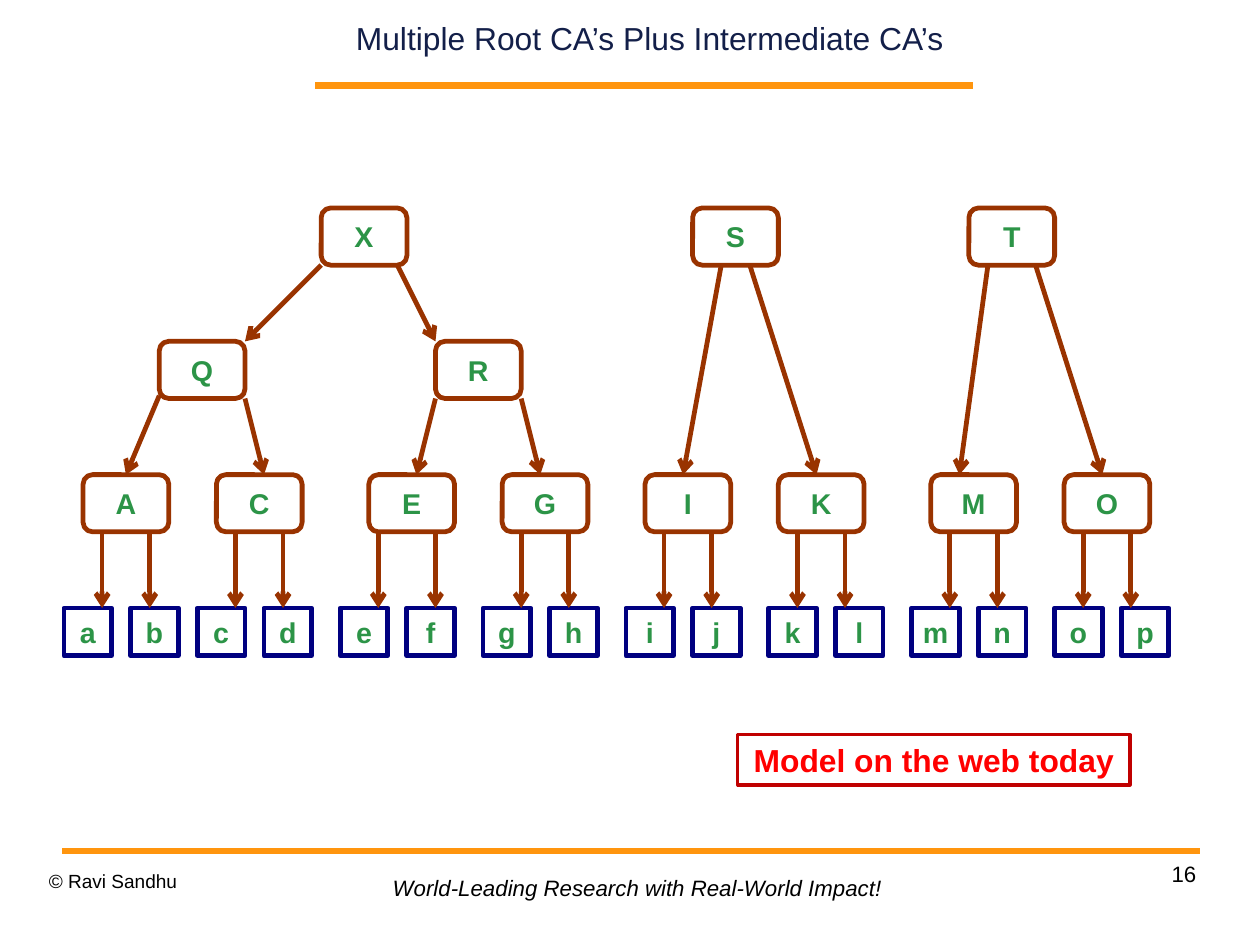
from dataclasses import dataclass

from lxml.etree import SubElement
from pptx import Presentation
from pptx.dml.color import RGBColor
from pptx.enum.shapes import MSO_CONNECTOR as Link, MSO_SHAPE as Preset
from pptx.enum.text import MSO_ANCHOR as Anchor, MSO_AUTO_SIZE as Fit, PP_ALIGN as Align
from pptx.oxml.ns import qn
from pptx.util import Cm, Inches, Pt

WIDTH, HEIGHT = Cm(28), Cm(21)
CELL = 1 / 12                  # grid step of the tree, inches
TREE_LEFT, TREE_TOP = 0.56, 1.82
CA_COLS, CA_ROWS, USER_SIDE = 9, 6, 5
ROOT, MIDDLE, ISSUER, USER = 0, 14, 28, 42    # top row of each level
BROWN, NAVY, GREEN, ORANGE = "993300", "000080", "2C9447", "FF950E"


@dataclass
class Node:
    name: str
    col: float
    row: float


@dataclass
class Arrow:
    start: tuple[float, float]
    end: tuple[float, float]
    target: str = ""           # node joined at the middle of its top side


AUTHORITIES = [
    Node("X", 27, ROOT), Node("S", 66, ROOT), Node("T", 95, ROOT),
    Node("Q", 10, MIDDLE), Node("R", 39, MIDDLE),
    *(Node(name, col, ISSUER)
      for name, col in zip("ACEGIKMO", (2, 16, 32, 46, 61, 75, 91, 105))),
]
# Users stand in pairs, seven columns apart
USERS = [
    Node("abcdefghijklmnop"[2 * pair + i], col + 7 * i, USER)
    for pair, col in enumerate((0, 14, 29, 44, 59, 74, 89, 104))
    for i in range(2)
]
ARROWS = [
    Arrow((27, ROOT + CA_ROWS), (19, MIDDLE)),
    Arrow((35, ROOT + CA_ROWS), (39, MIDDLE)),
    Arrow((10, MIDDLE + CA_ROWS - 0.3), (6.5, ISSUER), "A"),
    *(Arrow((start, MIDDLE + CA_ROWS), (end, ISSUER))
      for start, end in ((19, 21), (39, 37), (48, 50))),
    *(Arrow((start, ROOT + CA_ROWS), (end, ISSUER))
      for start, end in ((69, 65), (72, 79), (97, 94), (102, 109))),
    *(Arrow((ca.col + shift, ISSUER + CA_ROWS), (ca.col + shift, USER))
      for ca in AUTHORITIES if ca.row == ISSUER
      for shift in (1 if ca.name == "E" else 2, 7)),
]


def colour(code: str) -> RGBColor:
    return RGBColor.from_string(code)


def across(percent: float) -> int:
    return round(WIDTH * percent / 100)


def down(percent: float) -> int:
    return round(HEIGHT * percent / 100)


def column(col: float) -> int:
    return Inches(TREE_LEFT + col * CELL)


def row_top(row: float) -> int:
    return Inches(TREE_TOP + row * CELL)


def write(shape, text: str, *, size: float, ink: str = "000000", bold: bool = False,
          italic: bool = False, align=Align.LEFT, anchor=Anchor.TOP, wrap: bool = True,
          insets: tuple[float, float] = (0, 0), spacing: float = 1.0, fit=Fit.NONE) -> None:
    frame = shape.text_frame
    frame.auto_size = fit
    frame.word_wrap = wrap
    frame.vertical_anchor = anchor
    frame.margin_left = frame.margin_right = Inches(insets[0])
    frame.margin_top = frame.margin_bottom = Inches(insets[1])
    paragraph = frame.paragraphs[0]
    paragraph.alignment = align
    paragraph.line_spacing = spacing
    run = paragraph.add_run()
    run.text = text
    font = run.font
    font.name, font.size, font.bold, font.italic = "Arial", Pt(size), bold, italic
    font.color.rgb = colour(ink)


def outlined(slide, preset, left: int, top: int, width: int, height: int,
             line: str, weight: float):
    shape = slide.shapes.add_shape(preset, left, top, width, height)
    shape.shadow.inherit = False
    shape.fill.background()
    shape.line.color.rgb = colour(line)
    shape.line.width = Pt(weight)
    return shape


def draw_node(slide, node: Node, preset, cols: float, rows: float, line: str):
    shape = outlined(slide, preset, column(node.col), row_top(node.row),
                     Inches(cols * CELL), Inches(rows * CELL), line, 3)
    write(shape, node.name, size=18, ink=GREEN, bold=True, align=Align.CENTER,
          anchor=Anchor.MIDDLE, wrap=False, insets=(0.1, 0.05))
    return shape


def draw_line(slide, x1: int, y1: int, x2: int, y2: int, line: str, weight: float):
    link = slide.shapes.add_connector(Link.STRAIGHT, x1, y1, x2, y2)
    link.line.color.rgb = colour(line)
    link.line.width = Pt(weight)
    SubElement(link._element.spPr, qn("a:effectLst"))
    return link


def draw_arrow(slide, arrow: Arrow, boxes: dict) -> None:
    link = draw_line(slide, column(arrow.start[0]), row_top(arrow.start[1]),
                     column(arrow.end[0]), row_top(arrow.end[1]), BROWN, 3)
    SubElement(link.line._get_or_add_ln(), qn("a:tailEnd"), type="arrow")
    if arrow.target:
        link.end_connect(boxes[arrow.target], 0)


def textbox(slide, left: float, top: float, width: float, height: float):
    return slide.shapes.add_textbox(across(left), down(top), across(width), down(height))


def main() -> None:
    deck = Presentation()
    deck.slide_width, deck.slide_height = WIDTH, HEIGHT
    slide = deck.slides.add_slide(deck.slide_layouts[5])

    # Rules under the title and above the footer
    for left, right, level in ((25.04, 77.2, 9.07), (4.96, 95.25, 90.05)):
        draw_line(slide, across(left), down(level), across(right), down(level), ORANGE, 4.31)

    # Footer
    write(textbox(slide, 71.63, 91.05, 23.32, 6.89), "16", size=14,
          align=Align.RIGHT, spacing=1.01)
    write(textbox(slide, 3.88, 91.98, 23.32, 5.2), "© Ravi Sandhu", size=12, spacing=1.01)
    write(textbox(slide, 30.35, 92.02, 41.56, 3.99),
          "World-Leading Research with Real-World Impact!", size=14, italic=True,
          wrap=False, insets=(0.09, 0.04), fit=Fit.SHAPE_TO_FIT_TEXT)

    # Title
    title = slide.shapes.title
    title.left, title.top = across(25.82), down(0.66)
    title.width, title.height = across(51.52), down(6.77)
    write(title, "Multiple Root CA’s Plus Intermediate CA’s", size=20, ink="131F49",
          align=Align.CENTER, anchor=Anchor.MIDDLE)

    # Trees of authorities and their users
    boxes = {ca.name: draw_node(slide, ca, Preset.ROUNDED_RECTANGLE, CA_COLS, CA_ROWS, BROWN)
             for ca in AUTHORITIES}
    for user in USERS:
        draw_node(slide, user, Preset.RECTANGLE, USER_SIDE, USER_SIDE, NAVY)
    for arrow in ARROWS:
        draw_arrow(slide, arrow, boxes)

    # Callout
    callout = outlined(slide, Preset.RECTANGLE, across(58.56), down(77.75),
                       across(31.13), down(5.32), "C00000", 2)
    write(callout, "Model on the web today", size=20, ink="FF0000", bold=True,
          align=Align.CENTER, insets=(0.1, 0.05), fit=Fit.SHAPE_TO_FIT_TEXT)

    deck.save("out.pptx")


if __name__ == "__main__":
    main()
